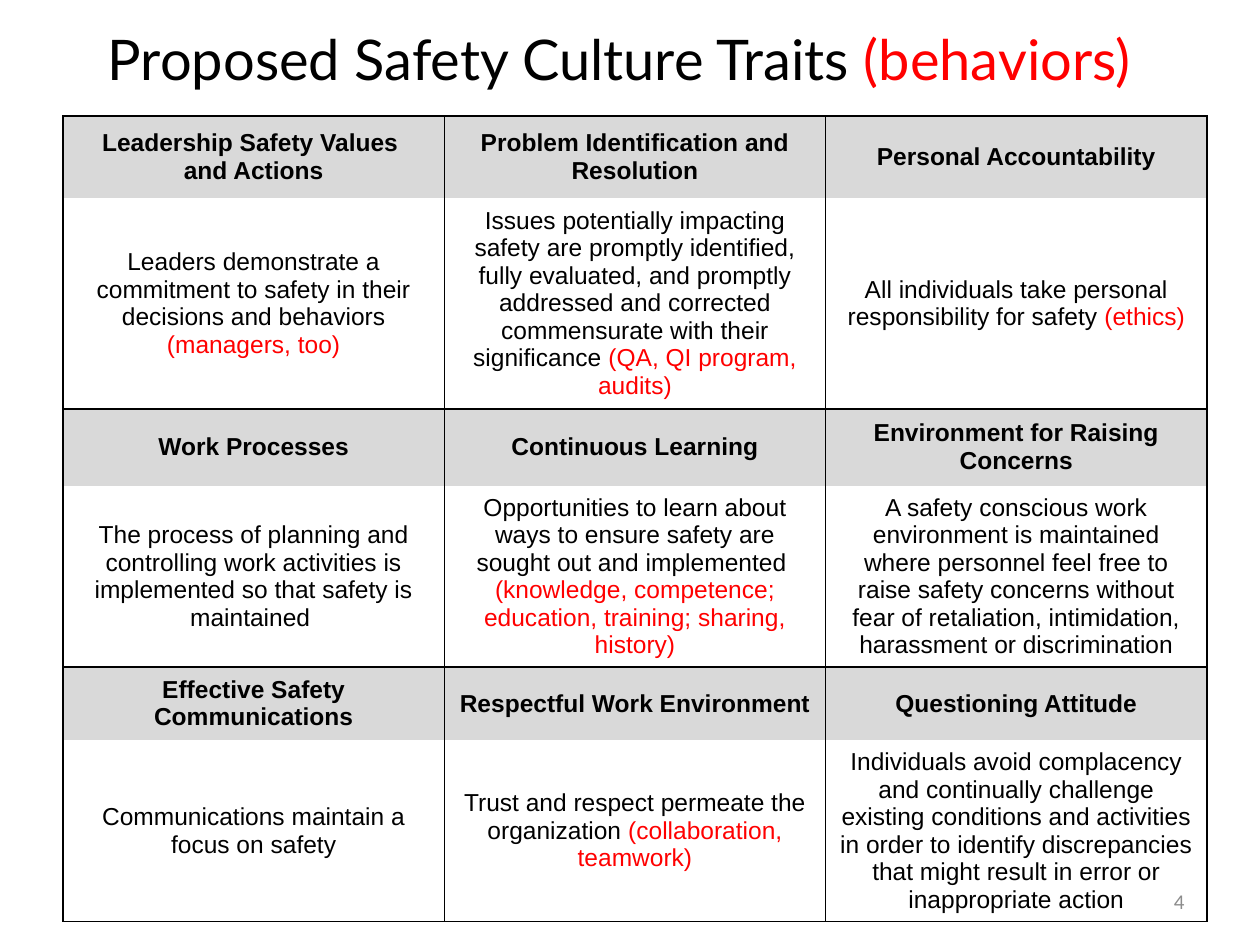
from dataclasses import dataclass

import pptx
import pptx.dml.color
import pptx.enum.text
import pptx.oxml
import pptx.oxml.ns
import pptx.util
from pptx.util import Inches

ALIGN = pptx.enum.text.PP_ALIGN
MIDDLE = pptx.enum.text.MSO_ANCHOR.MIDDLE


@dataclass(frozen=True)
class Theme:
    text: str = "000000"
    accent: str = "FF0000"
    muted: str = "8C8C8C"
    header_fill: str = "D9D9D9"
    border: str = "000000"
    title_font: str = "Lato"
    table_font: str = "Arial"
    number_font: str = "Calibri"
    title_size: int = 32
    table_size: int = 14
    number_size: int = 12
    border_width: int = 1


@dataclass(frozen=True)
class Trait:
    name: str  # a line feed starts a new paragraph
    description: str
    remark: str = ""


THEME = Theme()
COLUMNS = 3
TABLE_WIDTH = 9.08
ROW_HEIGHTS = (0.65, 1.63, 0.61, 1.41, 0.58, 1.41)
DESCRIPTION_MARGIN = 0.02

TRAITS = (
    Trait("Leadership Safety Values \nand Actions",
          "Leaders demonstrate a commitment to safety in their decisions and behaviors",
          " (managers, too)"),
    Trait("Problem Identification and Resolution",
          "Issues potentially impacting safety are promptly identified, fully evaluated, "
          "and promptly addressed and corrected commensurate with their significance",
          " (QA, QI program, audits)"),
    Trait("Personal Accountability",
          "All individuals take personal responsibility for safety ",
          "(ethics)"),
    Trait("Work Processes",
          "The process of planning and controlling work activities is implemented "
          "so that safety is maintained "),
    Trait("Continuous Learning",
          "Opportunities to learn about ways to ensure safety are sought out and implemented ",
          " (knowledge, competence; education, training; sharing, history)"),
    Trait("Environment for Raising Concerns",
          "A safety conscious work environment is maintained where personnel feel free to "
          "raise safety concerns without fear of retaliation, intimidation, harassment "
          "or discrimination"),
    Trait("Effective Safety Communications",
          "Communications maintain a focus on safety"),
    Trait("Respectful Work Environment",
          "Trust and respect permeate the organization ",
          "(collaboration, teamwork)"),
    Trait("Questioning Attitude",
          "Individuals avoid complacency and continually challenge existing conditions and "
          "activities in order to identify discrepancies that might result in error or "
          "inappropriate action"),
)


def add_run(para, text: str, font: str, size: int, color: str, bold: bool = False) -> None:
    run = para.add_run()
    run.text = text
    run.font.name = font
    run.font.size = pptx.util.Pt(size)
    run.font.bold = bold
    run.font.color.rgb = pptx.dml.color.RGBColor.from_string(color)


def add_table_run(para, text: str, color: str = THEME.text, bold: bool = False) -> None:
    add_run(para, text, THEME.table_font, THEME.table_size, color, bold)


def set_borders(cell, sides: str) -> None:
    """Draw the named sides (letters of LRTB) and clear the others."""
    properties = cell._tc.get_or_add_tcPr()
    for side in "LRTB":
        if side in sides:
            paint = f'<a:solidFill><a:srgbClr val="{THEME.border}"/></a:solidFill>'
        else:
            paint = "<a:noFill/>"
        properties.append(pptx.oxml.parse_xml(
            f'<a:ln{side} {pptx.oxml.ns.nsdecls("a")} '
            f'w="{pptx.util.Pt(THEME.border_width)}">{paint}</a:ln{side}>'))


def fill_header(cell, trait: Trait) -> None:
    set_borders(cell, "LRT")
    cell.fill.solid()
    cell.fill.fore_color.rgb = pptx.dml.color.RGBColor.from_string(THEME.header_fill)
    cell.vertical_anchor = MIDDLE
    frame = cell.text_frame
    for index, line in enumerate(trait.name.split("\n")):
        para = frame.add_paragraph() if index else frame.paragraphs[0]
        para.alignment = ALIGN.CENTER
        add_table_run(para, line, bold=True)


def fill_description(cell, trait: Trait) -> None:
    set_borders(cell, "LRB")
    cell.fill.background()
    cell.vertical_anchor = MIDDLE
    cell.margin_top = cell.margin_bottom = Inches(DESCRIPTION_MARGIN)
    para = cell.text_frame.paragraphs[0]
    para.alignment = ALIGN.CENTER
    add_table_run(para, trait.description)
    if trait.remark:
        add_table_run(para, trait.remark, THEME.accent)


def add_title(page) -> None:
    title = page.shapes.title
    title.left, title.top = Inches(0), Inches(0)
    title.width, title.height = Inches(9.83), Inches(0.92)
    title.text_frame.vertical_anchor = MIDDLE
    para = title.text_frame.paragraphs[0]
    para.alignment = ALIGN.CENTER
    for text, color in (("Proposed Safety Culture Traits ", THEME.text),
                        ("(behaviors)", THEME.accent)):
        add_run(para, text, THEME.title_font, THEME.title_size, color)


def add_page_number(page, number: str) -> None:
    box = page.shapes.add_textbox(Inches(7.17), Inches(6.95), Inches(2.33), Inches(0.4))
    box.text_frame.word_wrap = True
    box.text_frame.vertical_anchor = MIDDLE
    para = box.text_frame.paragraphs[0]
    para.alignment = ALIGN.RIGHT
    add_run(para, number, THEME.number_font, THEME.number_size, THEME.muted)


def add_traits_table(page) -> None:
    """Each group of three traits takes a header row and a description row."""
    table = page.shapes.add_table(len(ROW_HEIGHTS), COLUMNS, Inches(0.5), Inches(0.92),
                                  Inches(TABLE_WIDTH), Inches(sum(ROW_HEIGHTS))).table
    table.first_row = False
    table.horz_banding = False
    for row, height in zip(table.rows, ROW_HEIGHTS):
        row.height = Inches(height)
    for index, trait in enumerate(TRAITS):
        group, column_index = divmod(index, COLUMNS)
        fill_header(table.cell(2 * group, column_index), trait)
        fill_description(table.cell(2 * group + 1, column_index), trait)


def main() -> None:
    deck = pptx.Presentation()
    deck.slide_width, deck.slide_height = Inches(10), Inches(7.5)
    page = deck.slides.add_slide(deck.slide_layouts.get_by_name("Title Only"))
    add_title(page)
    add_page_number(page, "4")
    add_traits_table(page)
    deck.save("out.pptx")


if __name__ == "__main__":
    main()
